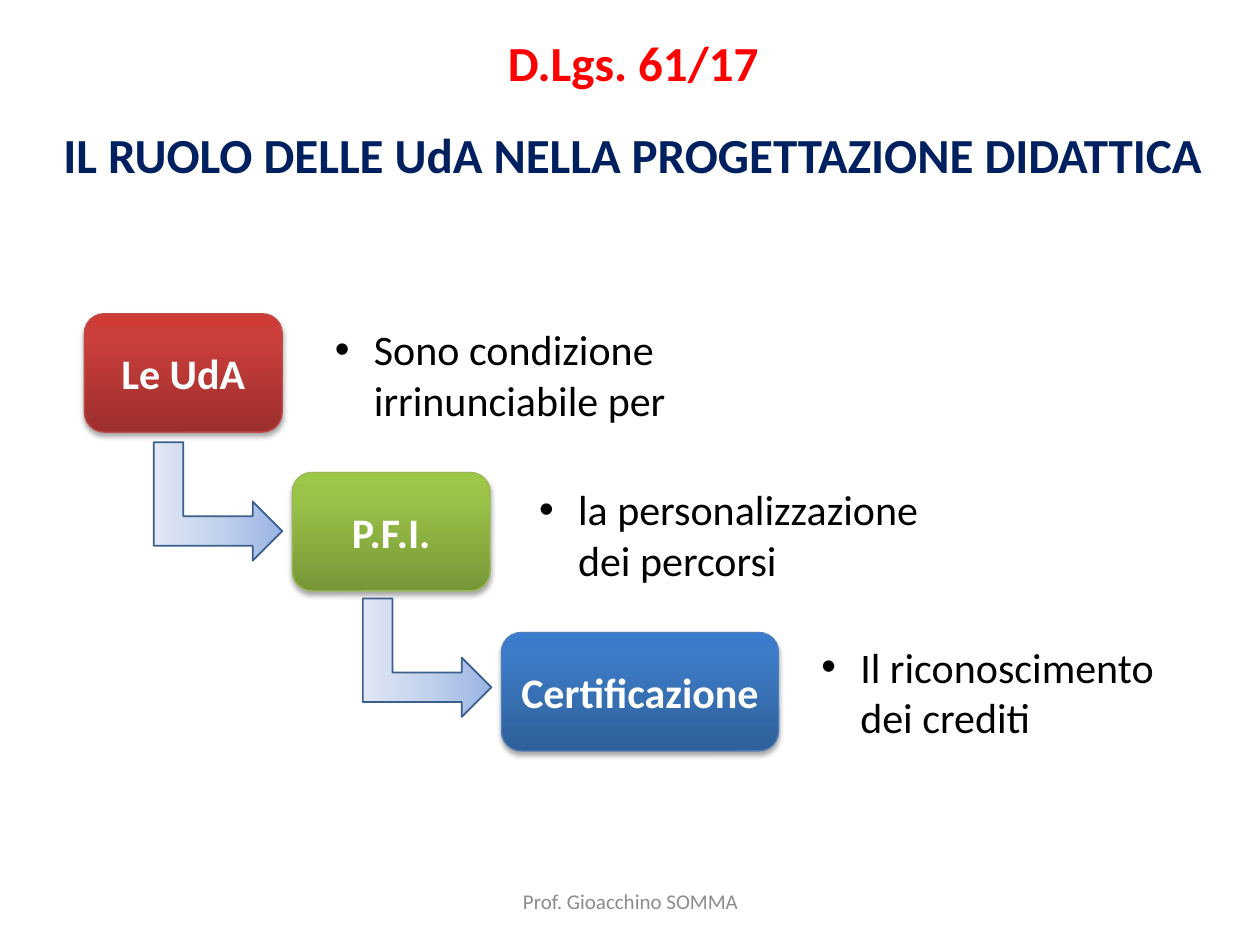
from copy import deepcopy
from lxml import etree
from pptx import Presentation
from pptx.dml.color import RGBColor
from pptx.enum.shapes import MSO_SHAPE
from pptx.enum.text import MSO_ANCHOR, MSO_AUTO_SIZE, PP_ALIGN
from pptx.oxml import parse_xml
from pptx.oxml.ns import nsdecls, qn
from pptx.util import Inches, Pt

RED = RGBColor(0xFF, 0x00, 0x00)
NAVY = RGBColor(0x00, 0x20, 0x60)
GRAY = RGBColor(0x8C, 0x8C, 0x8C)
BLACK = RGBColor(0x00, 0x00, 0x00)
WHITE = RGBColor(0xFF, 0xFF, 0xFF)
UDA_COLORS = [RGBColor(0x9C, 0x2F, 0x2D), RGBColor(0xCB, 0x3E, 0x3A), RGBColor(0xCE, 0x3B, 0x37)]
UDA_EDGE = RGBColor(0xBF, 0x4C, 0x48)
PFI_COLORS = [RGBColor(0x77, 0x97, 0x37), RGBColor(0x9B, 0xC3, 0x48), RGBColor(0x9D, 0xC7, 0x46)]
PFI_EDGE = RGBColor(0x98, 0xB9, 0x55)
CERT_COLORS = [RGBColor(0x2F, 0x5F, 0x99), RGBColor(0x3D, 0x7C, 0xC7), RGBColor(0x3A, 0x7C, 0xCB)]
CERT_EDGE = RGBColor(0x4B, 0x7E, 0xBC)
ARROW_COLORS = [RGBColor(0x9A, 0xB5, 0xE4), RGBColor(0xC2, 0xD1, 0xED), RGBColor(0xE1, 0xE8, 0xF5)]
ARROW_EDGE = RGBColor(0x3A, 0x5F, 0x8C)


def write(holder, text, size=24, color=BLACK, bold=False, align=PP_ALIGN.CENTER,
          anchor=MSO_ANCHOR.TOP, bullet=False):
    frame = holder.text_frame
    frame.word_wrap = True
    frame.auto_size = MSO_AUTO_SIZE.NONE
    frame.vertical_anchor = anchor
    paragraph = frame.paragraphs[0]
    paragraph.alignment = align
    run = paragraph.add_run()
    run.text = text
    run.font.name = "Calibri"
    run.font.size = Pt(size)
    run.font.bold = bold
    run.font.color.rgb = color
    if bullet:
        props = paragraph._p.get_or_add_pPr()
        props.set("marL", str(Inches(0.31)))
        props.set("indent", str(-Inches(0.31)))
        etree.SubElement(props, qn("a:buFont")).set("typeface", "Arial")
        etree.SubElement(props, qn("a:buChar")).set("char", "•")


def paint(shape, colors, middle, angle, edge, edge_width):
    shape.shadow.inherit = False
    shape.fill.gradient()
    shape.fill.gradient_angle = angle
    stop_list = shape._element.spPr.find(".//" + qn("a:gsLst"))
    stop_list.append(deepcopy(stop_list[-1]))
    for stop, color, position in zip(shape.fill.gradient_stops, colors, (0, middle, 1)):
        stop.color.rgb = color
        stop.position = position
    shape.line.color.rgb = edge
    shape.line.width = Pt(edge_width)


prs = Presentation()
prs.slide_width, prs.slide_height = Inches(10), Inches(7.5)
slide = prs.slides.add_slide(prs.slide_layouts[5])
shapes = slide.shapes

heading = shapes.title
heading.left, heading.top = Inches(0.24), Inches(0.94)
heading.width, heading.height = Inches(9.56), Inches(0.57)
write(heading, "IL RUOLO DELLE UdA NELLA PROGETTAZIONE DIDATTICA", size=28, color=NAVY, bold=True)

footer = shapes.add_textbox(Inches(3.42), Inches(6.95), Inches(3.17), Inches(0.4))
write(footer, "Prof. Gioacchino SOMMA", size=12, color=GRAY, anchor=MSO_ANCHOR.MIDDLE)

decree = shapes.add_textbox(Inches(0.84), Inches(0.21), Inches(8.37), Inches(0.57))
write(decree, "D.Lgs. 61/17", size=28, color=RED, bold=True)

steps = [
    ("Le UdA", 0.67, 2.49, 1.57, UDA_COLORS, UDA_EDGE,
     "Sono condizione irrinunciabile per", 2.56, 2.52, 3.26),
    ("P.F.I.", 2.32, 3.75, 1.57, PFI_COLORS, PFI_EDGE,
     "la personalizzazione dei percorsi", 4.18, 3.79, 3.66),
    ("Certificazione", 3.98, 5.02, 2.2, CERT_COLORS, CERT_EDGE,
     "Il riconoscimento dei crediti", 6.42, 5.04, 3.26),
]
for name, left, top, width, colors, edge, note, note_left, note_top, note_width in steps:
    step = shapes.add_shape(MSO_SHAPE.ROUNDED_RECTANGLE,
                            Inches(left), Inches(top), Inches(width), Inches(0.94))
    paint(step, colors, 0.8, 90, edge, 0.75)
    step._element.spPr.find(qn("a:effectLst")).append(parse_xml(
        f'<a:outerShdw {nsdecls("a")} blurRad="{Pt(3.1)}" dist="{Pt(1.8)}" dir="5400000" '
        'rotWithShape="0"><a:srgbClr val="000000"><a:alpha val="35000"/></a:srgbClr></a:outerShdw>'))
    step.text_frame.margin_left = step.text_frame.margin_right = Inches(0.05)
    write(step, name, color=WHITE, bold=True, anchor=MSO_ANCHOR.MIDDLE)

    detail = shapes.add_textbox(Inches(note_left), Inches(note_top), Inches(note_width), Inches(0.91))
    write(detail, note, align=PP_ALIGN.LEFT, bullet=True)

for left, top in [(1.26, 3.47), (2.92, 4.71)]:
    arrow = shapes.add_shape(MSO_SHAPE.BENT_UP_ARROW,
                             Inches(left), Inches(top), Inches(0.94), Inches(1.02))
    arrow.rotation = 90
    paint(arrow, ARROW_COLORS, 0.5, 270, ARROW_EDGE, 1)

prs.save("out.pptx")
